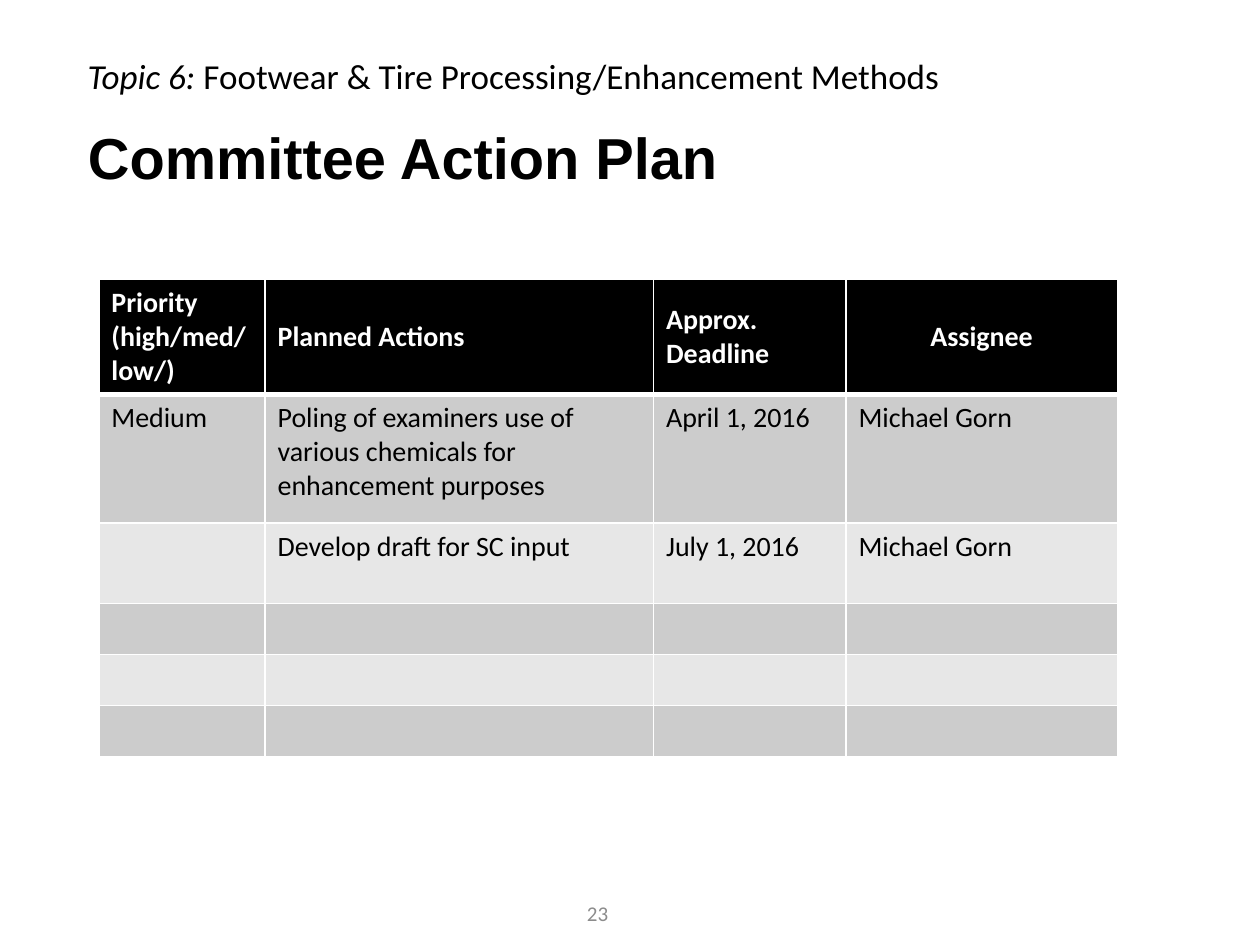
from lxml.etree import SubElement
from pptx import Presentation
from pptx.dml.color import RGBColor
from pptx.enum.text import MSO_ANCHOR, MSO_AUTO_SIZE, PP_ALIGN
from pptx.oxml.ns import qn
from pptx.util import Pt

COLORS = {
    "black": "000000",
    "white": "FFFFFF",
    "dark_band": "CCCCCC",
    "light_band": "E7E7E7",
    "number": "8C8C8C",
}
TITLE = {"name": "Arial", "size": Pt(33), "bold": True}
TOPIC = {"name": "Calibri", "size": Pt(20), "italic": False}
TOPIC_LABEL = {**TOPIC, "italic": True}
HEADER = {"name": "Calibri", "size": Pt(16), "bold": True}
BODY = {**HEADER, "bold": False}
NUMBER = {"name": "Calibri", "size": Pt(12)}

COLUMN_WIDTHS = [95, 222, 110, 155]
ROW_HEIGHTS = [65.5, 73.5, 46, 29, 29, 29]
ROWS = [
    ["Priority (high/med/low/)", "Planned Actions", "Approx. Deadline", "Assignee"],
    ["Medium", "Poling of examiners use of various chemicals for enhancement purposes",
     "April 1, 2016", "Michael Gorn"],
    ["", "Develop draft for SC input", "July 1, 2016", "Michael Gorn"],
    [""] * 4,
    [""] * 4,
    [""] * 4,
]


def set_attributes(target, values):
    """Set each named value on the target."""
    for name, value in values.items():
        setattr(target, name, value)


def add_run(p, text, style, color="black"):
    """Append a formatted run to a paragraph."""
    r = p.add_run()
    r.text = text
    set_attributes(r.font, style)
    r.font.color.rgb = RGBColor.from_string(COLORS[color])


def add_title(slide, text):
    """Place and format the slide title."""
    sp = slide.shapes.title
    set_attributes(sp, {"left": Pt(43), "top": Pt(39.5), "width": Pt(620), "height": Pt(104.5)})
    tf = sp.text_frame
    set_attributes(tf, {"auto_size": MSO_AUTO_SIZE.NONE, "word_wrap": True,
                        "vertical_anchor": MSO_ANCHOR.MIDDLE})
    p = tf.paragraphs[0]
    set_attributes(p, {"alignment": PP_ALIGN.LEFT, "line_spacing": 0.9})
    add_run(p, text, TITLE)


def add_text(slide, left, top, width, height, runs, anchor=MSO_ANCHOR.TOP, align=PP_ALIGN.LEFT):
    """Add a one-paragraph text box made of formatted runs."""
    tf = slide.shapes.add_textbox(Pt(left), Pt(top), Pt(width), Pt(height)).text_frame
    set_attributes(tf, {"word_wrap": True, "vertical_anchor": anchor})
    p = tf.paragraphs[0]
    p.alignment = align
    for run in runs:
        add_run(p, *run)


def add_borders(cell, bottom, top):
    """Draw white cell borders with the given bottom and top weights."""
    tc_pr = cell._tc.get_or_add_tcPr()
    for side, weight in {"lnL": 1, "lnR": 1, "lnT": top, "lnB": bottom}.items():
        ln = SubElement(tc_pr, qn(f"a:{side}"), w=str(Pt(weight)))
        fill = SubElement(ln, qn("a:solidFill"))
        SubElement(fill, qn("a:srgbClr"), val=COLORS["white"])


def format_cell(cell, text, row, column):
    """Fill one table cell according to its row and column."""
    is_header = row == 0
    add_borders(cell, bottom=3 if is_header else 1, top=3 if row == 1 else 1)
    fill = "black" if is_header else "dark_band" if row % 2 else "light_band"
    cell.fill.solid()
    cell.fill.fore_color.rgb = RGBColor.from_string(COLORS[fill])
    cell.vertical_anchor = MSO_ANCHOR.MIDDLE if is_header else MSO_ANCHOR.TOP
    p = cell.text_frame.paragraphs[0]
    p.alignment = PP_ALIGN.CENTER if is_header and column == 3 else PP_ALIGN.LEFT
    if text:
        add_run(p, text, HEADER if is_header else BODY, "white" if is_header else "black")


def add_plan_table(slide, left, top):
    """Add the action plan table."""
    table = slide.shapes.add_table(
        len(ROWS), len(COLUMN_WIDTHS), Pt(left), Pt(top),
        Pt(sum(COLUMN_WIDTHS)), Pt(sum(ROW_HEIGHTS))).table
    for column, width in zip(table.columns, COLUMN_WIDTHS):
        column.width = Pt(width)
    for row, height in zip(table.rows, ROW_HEIGHTS):
        row.height = Pt(height)
    for i, texts in enumerate(ROWS):
        for j, text in enumerate(texts):
            format_cell(table.cell(i, j), text, i, j)


def main():
    """Build and save the committee action plan slide."""
    prs = Presentation()
    set_attributes(prs, {"slide_width": Pt(720), "slide_height": Pt(540)})
    s = prs.slides.add_slide(prs.slide_layouts[5])
    add_title(s, "Committee Action Plan")
    add_plan_table(s, 56.5, 159.5)
    add_text(s, 43, 27.5, 518, 31.5, [
        ("Topic 6: ", TOPIC_LABEL),
        ("Footwear & Tire Processing/Enhancement Methods", TOPIC),
    ])
    add_text(s, 260.5, 507.5, 162, 29, [("23", NUMBER, "number")],
             MSO_ANCHOR.MIDDLE, PP_ALIGN.CENTER)
    prs.save("out.pptx")


if __name__ == "__main__":
    main()
